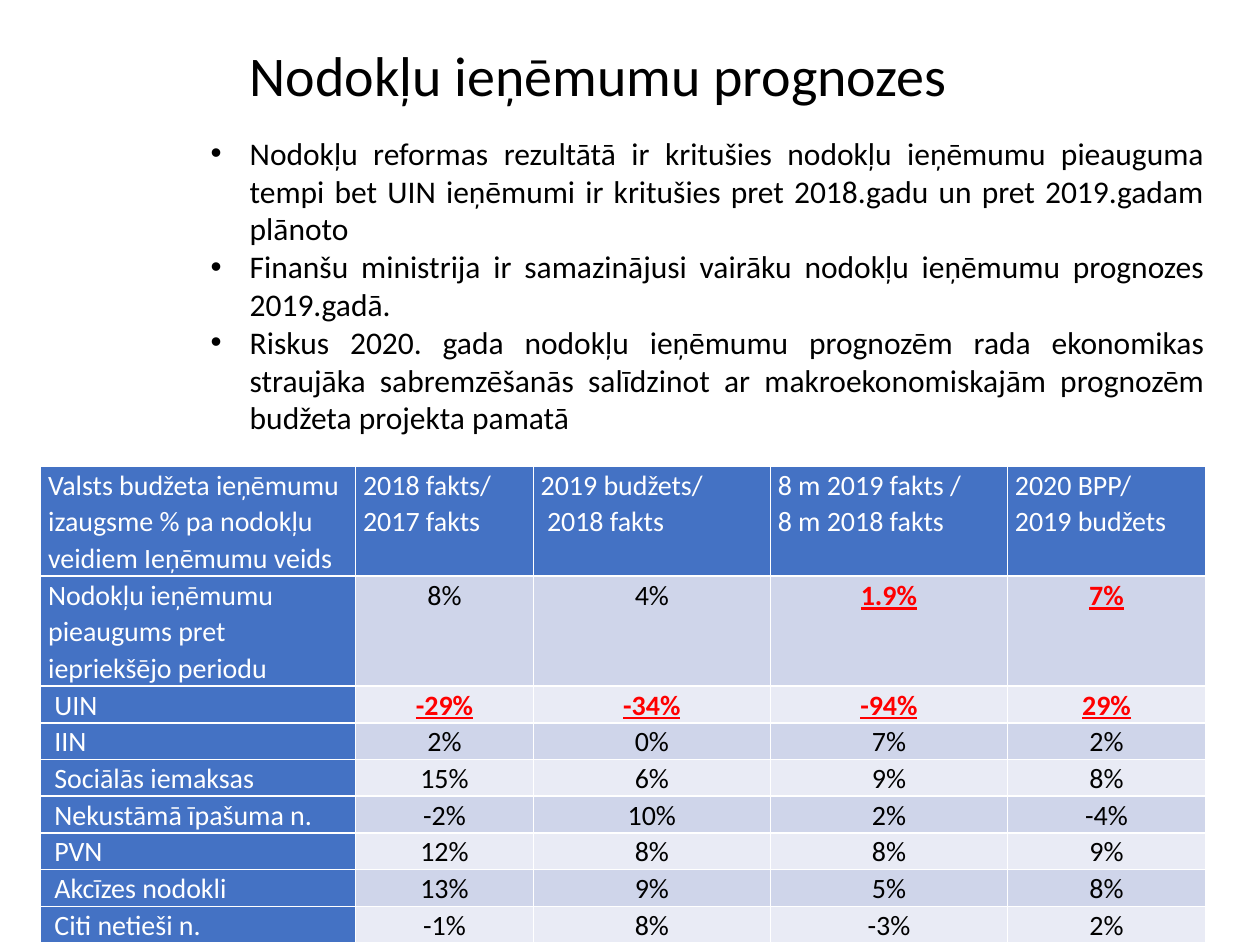
from lxml import etree
from pptx import Presentation
from pptx.dml.color import RGBColor
from pptx.enum import text
from pptx.oxml import ns
from pptx.util import Cm, Pt

COLORS = {"blue": "4472C4", "odd": "CFD5EA", "even": "E9EBF5",
          "white": "FFFFFF", "black": "000000", "red": "FF0000"}


def style_runs(para, size, color, strong=False):
    for span in para.runs:
        span.font.name = "Calibri"
        span.font.size = Pt(size)
        span.font.bold = strong
        span.font.underline = strong
        span.font.color.rgb = RGBColor.from_string(COLORS[color])


def add_borders(cell):
    props = cell._tc.get_or_add_tcPr()
    for side in ("lnL", "lnR", "lnT", "lnB"):
        line = etree.SubElement(props, ns.qn(f"a:{side}"), w=str(Pt(1)))
        fill = etree.SubElement(line, ns.qn("a:solidFill"))
        etree.SubElement(fill, ns.qn("a:srgbClr"), val=COLORS["white"])


deck = Presentation()
deck.slide_width, deck.slide_height = Cm(25.4), Cm(19.05)
page = deck.slides.add_slide(deck.slide_layouts[1])

# Title
title = page.shapes.title
title.left, title.top, title.width, title.height = Cm(4.78), Cm(0.69), Cm(16.76), Cm(1.63)
title.text_frame.text = "Nodokļu ieņēmumu prognozes"
title.text_frame.paragraphs[0].alignment = text.PP_ALIGN.LEFT
style_runs(title.text_frame.paragraphs[0], 32, "black")

# Bulleted list
body = page.placeholders[1]
body.left, body.top, body.width, body.height = Cm(3.99), Cm(2.57), Cm(20.55), Cm(6.4)
body.text_frame.text = "\n".join([
    "Nodokļu reformas rezultātā ir kritušies nodokļu ieņēmumu pieauguma tempi "
    "bet UIN ieņēmumi ir kritušies pret 2018.gadu un pret 2019.gadam plānoto",
    "Finanšu ministrija ir samazinājusi vairāku nodokļu ieņēmumu prognozes 2019.gadā.",
    "Riskus 2020. gada nodokļu ieņēmumu prognozēm rada ekonomikas straujāka "
    "sabremzēšanās salīdzinot ar makroekonomiskajām prognozēm budžeta projekta pamatā",
])
for para in body.text_frame.paragraphs:
    para.alignment = text.PP_ALIGN.JUSTIFY
    para.space_before = Pt(0)
    indent = Cm(0.79)
    para._p.get_or_add_pPr().set("marL", str(indent))
    para._p.get_or_add_pPr().set("indent", str(-indent))
    style_runs(para, 18, "black")

for box in (title, body):
    box.text_frame.auto_size = text.MSO_AUTO_SIZE.NONE
    box.text_frame.vertical_anchor = text.MSO_ANCHOR.TOP

# Table of revenue growth by tax
rows = [
    ["Valsts budžeta ieņēmumu izaugsme % pa nodokļu veidiem Ieņēmumu veids",
     "2018 fakts/\n2017 fakts", "2019 budžets/\n 2018 fakts",
     "8 m 2019 fakts /\n8 m 2018 fakts", "2020 BPP/\n2019 budžets"],
    ["Nodokļu ieņēmumu pieaugums pret iepriekšējo periodu", "8%", "4%", "1.9%", "7%"],
    [" UIN", "-29%", "-34%", "-94%", "29%"],
    [" IIN", "2%", "0%", "7%", "2%"],
    [" Sociālās iemaksas", "15%", "6%", "9%", "8%"],
    [" Nekustāmā īpašuma n.", "-2%", "10%", "2%", "-4%"],
    [" PVN", "12%", "8%", "8%", "9%"],
    [" Akcīzes nodokli", "13%", "9%", "5%", "8%"],
    [" Citi netieši n.", "-1%", "8%", "-3%", "2%"],
]
highlighted = {(1, 3), (1, 4), (2, 1), (2, 2), (2, 3), (2, 4)}
widths = [6.35, 3.58, 4.78, 4.78, 3.99]
heights = [2.21] * 2 + [0.74] * 7

table = page.shapes.add_table(len(rows), len(widths), Cm(0.82), Cm(9.4),
                              Cm(sum(widths)), Cm(sum(heights))).table
for column, width in zip(table.columns, widths):
    column.width = Cm(width)

for r, values in enumerate(rows):
    table.rows[r].height = Cm(heights[r])
    for c, value in enumerate(values):
        cell = table.cell(r, c)
        is_label = r == 0 or c == 0
        strong = (r, c) in highlighted
        fill = "blue" if is_label else "odd" if r % 2 else "even"
        color = "white" if is_label else "red" if strong else "black"
        add_borders(cell)
        cell.fill.solid()
        cell.fill.fore_color.rgb = RGBColor.from_string(COLORS[fill])
        cell.margin_left = cell.margin_right = Cm(0.15)
        cell.margin_top = cell.margin_bottom = 0
        cell.text_frame.text = value
        for para in cell.text_frame.paragraphs:
            para.alignment = text.PP_ALIGN.LEFT if is_label else text.PP_ALIGN.CENTER
            para.line_spacing = 1.07
            style_runs(para, 16, color, strong)

deck.save("out.pptx")
